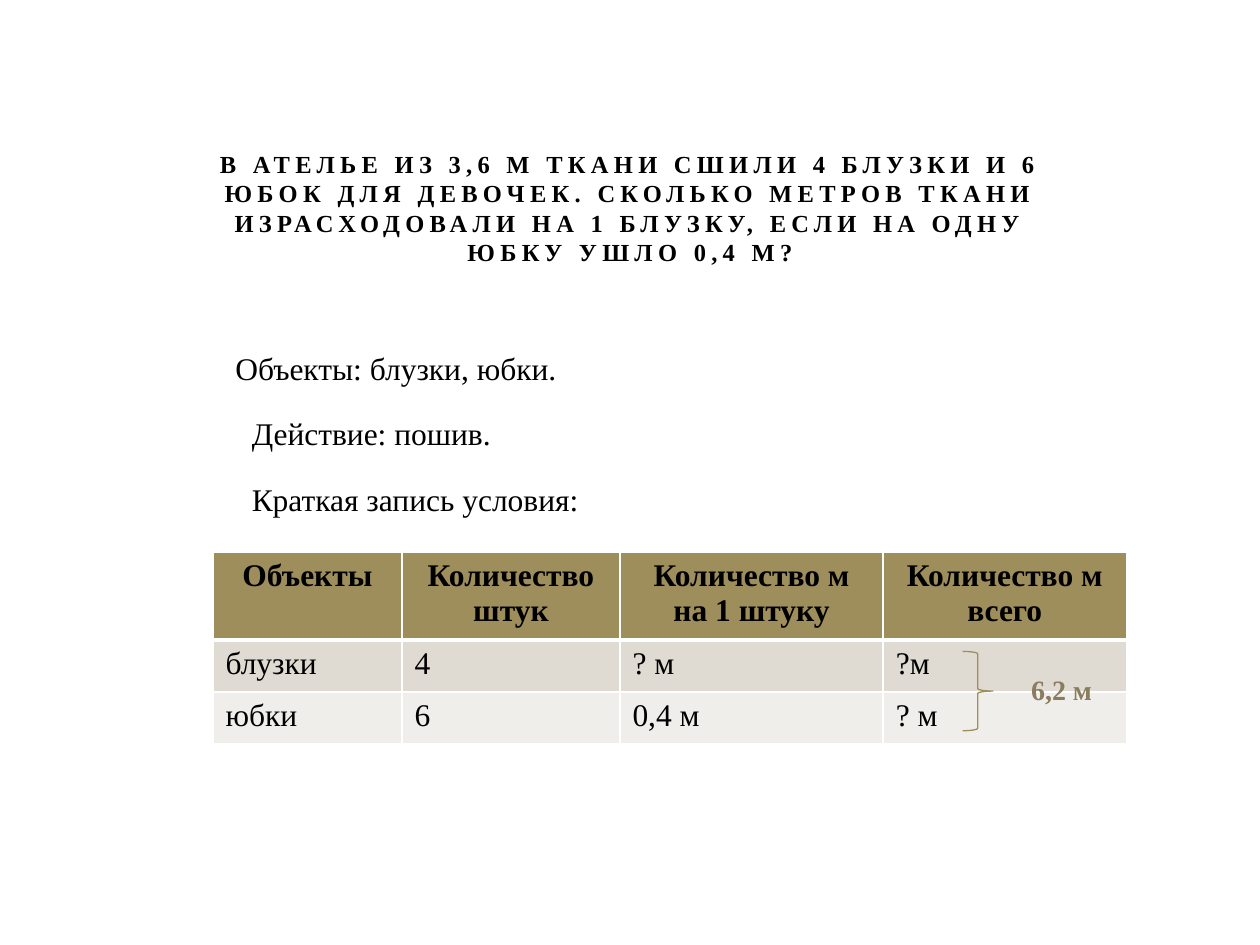
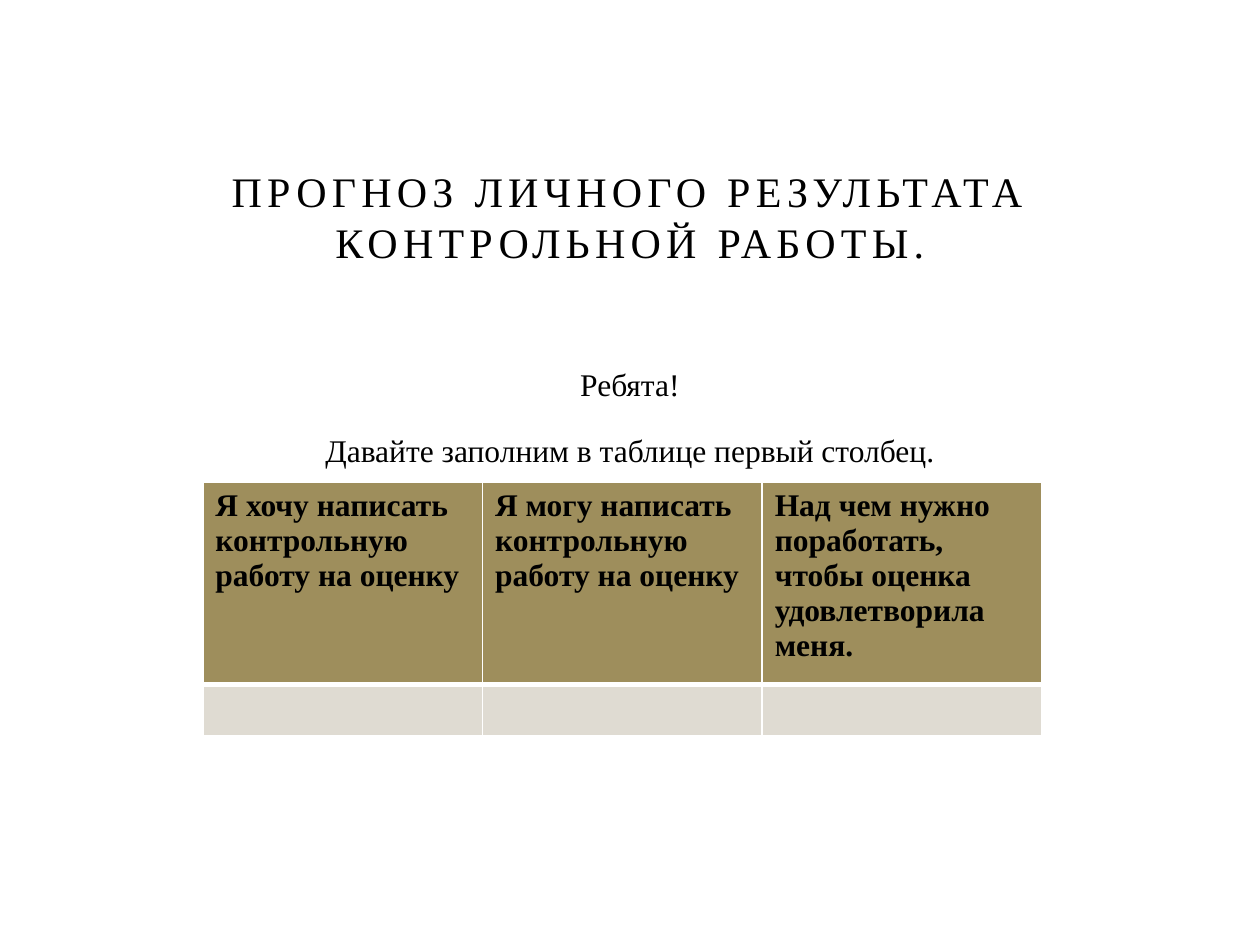
"""Build two lesson slides: a sewing problem and a forecast of test results."""
from lxml import etree
from pptx import Presentation
from pptx import util as u
from pptx.dml.color import RGBColor
from pptx.enum import shapes, text
from pptx.oxml.ns import qn

WIDTH, HEIGHT = 10, 7.5
FONT = "Times New Roman"
BLACK = RGBColor(0x00, 0x00, 0x00)
WHITE = RGBColor(0xFF, 0xFF, 0xFF)
OLIVE = RGBColor(0x9E, 0x8E, 0x5C)
TAUPE = RGBColor(0x8A, 0x7C, 0x5F)
ROW_FILLS = [OLIVE, RGBColor(0xDF, 0xDB, 0xD2), RGBColor(0xF0, 0xEE, 0xEA)]
CENTER, LEFT = text.PP_ALIGN.CENTER, text.PP_ALIGN.LEFT
ROW_HEIGHT = 0.41


def write(frame, lines, size=18, bold=False, color=BLACK, align=LEFT,
          line_spacing=None, gap=0, indents=(), tracking=0):
    for index, line in enumerate(lines):
        paragraph = frame.paragraphs[0] if index == 0 else frame.add_paragraph()
        paragraph.text = line
        paragraph.alignment = align
        paragraph.line_spacing = line_spacing
        paragraph.space_before = u.Pt(gap if index else 0)
        if indents:
            paragraph._p.get_or_add_pPr().set("indent", str(u.Inches(indents[index])))
        for run in paragraph.runs:
            run.font.name = FONT
            run.font.size = u.Pt(size)
            run.font.bold = bold
            run.font.color.rgb = color
            if tracking:
                run._r.get_or_add_rPr().set("spc", str(tracking * 100))


def add_grid(slide, rows, left, top, column_widths, header_height, header_align):
    height = header_height + ROW_HEIGHT * (len(rows) - 1)
    table = slide.shapes.add_table(
        len(rows), len(column_widths), u.Inches(left), u.Inches(top),
        u.Inches(sum(column_widths)), u.Inches(height)).table
    for column, width in zip(table.columns, column_widths):
        column.width = u.Inches(width)
    for row_index, values in enumerate(rows):
        header = row_index == 0
        table.rows[row_index].height = u.Inches(header_height if header else ROW_HEIGHT)
        borders = {"lnL": 1, "lnR": 1, "lnT": 3 if row_index == 1 else 1,
                   "lnB": 3 if header else 1}
        for column_index, value in enumerate(values):
            cell = table.cell(row_index, column_index)
            write(cell.text_frame, [value], bold=header,
                  align=header_align if header else LEFT)
            properties = cell._tc.get_or_add_tcPr()
            for side, points in borders.items():
                line = etree.SubElement(properties, qn(f"a:{side}"), w=str(u.Pt(points)))
                fill = etree.SubElement(line, qn("a:solidFill"))
                etree.SubElement(fill, qn("a:srgbClr"), val=str(WHITE))
            cell.fill.solid()
            cell.fill.fore_color.rgb = ROW_FILLS[row_index]


presentation = Presentation()
presentation.slide_width = u.Inches(WIDTH)
presentation.slide_height = u.Inches(HEIGHT)

pages = [
    dict(title="В АТЕЛЬЕ ИЗ 3,6 М ТКАНИ СШИЛИ 4 БЛУЗКИ И 6 ЮБОК ДЛЯ ДЕВОЧЕК. "
               "СКОЛЬКО МЕТРОВ ТКАНИ ИЗРАСХОДОВАЛИ НА 1 БЛУЗКУ, "
               "ЕСЛИ НА ОДНУ ЮБКУ УШЛО 0,4 М?",
         title_format=dict(size=14, bold=True),
         body=["Объекты: блузки, юбки.", "Действие: пошив.", "Краткая запись условия:"],
         body_format=dict(indents=(0.31, 0.44, 0.44)),
         body_left=1.46, body_top=2.54,
         table=dict(rows=[["Объекты", "Количество штук", "Количество м\vна 1 штуку",
                           "Количество м\vвсего"],
                          ["блузки", "4", "? м", "?м"],
                          ["юбки", "6", "0,4 м", "? м"]],
                    left=1.69, top=4.38, column_widths=[1.5, 1.73, 2.09, 1.93],
                    header_height=0.64, header_align=CENTER)),
    dict(title="ПРОГНОЗ ЛИЧНОГО РЕЗУЛЬТАТА КОНТРОЛЬНОЙ РАБОТЫ.",
         title_format=dict(size=24),
         body=["Ребята!", "Давайте заполним в таблице первый столбец."],
         body_format=dict(align=CENTER),
         body_left=1.5, body_top=2.67,
         table=dict(rows=[["Я хочу написать контрольную работу на оценку",
                           "Я могу написать контрольную работу на оценку",
                           "Над чем нужно поработать, чтобы оценка удовлетворила меня."],
                          ["", "", ""]],
                    left=1.61, top=3.83, column_widths=[2.22] * 3,
                    header_height=1.48, header_align=LEFT)),
]

for page in pages:
    slide = presentation.slides.add_slide(presentation.slide_layouts[5])
    title = slide.shapes.title
    title.left, title.top = u.Inches(WIDTH * 0.15), u.Inches(1.23)
    title.width, title.height = u.Inches(WIDTH * 0.7), u.Inches(HEIGHT / 8)
    title.text_frame.auto_size = text.MSO_AUTO_SIZE.NONE
    title.text_frame.vertical_anchor = text.MSO_ANCHOR.BOTTOM
    write(title.text_frame, [page["title"]], align=CENTER, tracking=3,
          **page["title_format"])

    body = slide.shapes.add_textbox(
        u.Inches(page["body_left"]), u.Inches(page["body_top"]),
        u.Inches(WIDTH * 0.7), u.Inches(HEIGHT * 0.8 - page["body_top"]))
    body.text_frame.word_wrap = True
    body.text_frame.margin_top = u.Inches(0.08)
    write(body.text_frame, page["body"], line_spacing=1.5, gap=5, **page["body_format"])
    add_grid(slide, **page["table"])

problem_slide = presentation.slides[0]
brace = problem_slide.shapes.add_shape(
    shapes.MSO_SHAPE.RIGHT_BRACE, u.Inches(7.64), u.Inches(5.17),
    u.Inches(0.24), u.Inches(0.63))
brace.shadow.inherit = False
brace.fill.background()
brace.line.color.rgb = OLIVE
brace.line.width = u.Pt(0.75)

total = problem_slide.shapes.add_textbox(
    u.Inches(8.07), u.Inches(5.29), u.Inches(0.71), u.Inches(0.37))
total.text_frame.word_wrap = False
total.text_frame.auto_size = text.MSO_AUTO_SIZE.SHAPE_TO_FIT_TEXT
write(total.text_frame, ["6,2 м"], size=16, bold=True, color=TAUPE, align=CENTER)

presentation.save("out.pptx")
